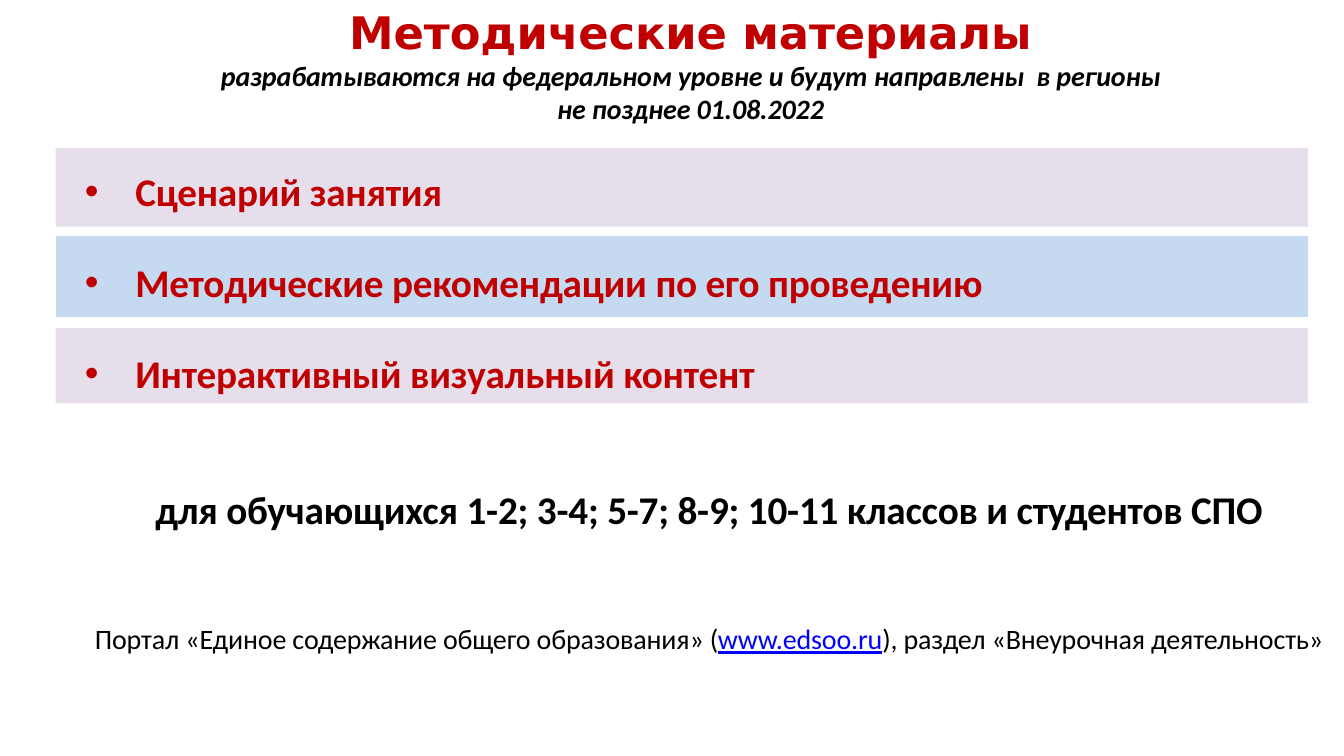
"""Build the slide on teaching materials for schools and colleges."""
from lxml.etree import SubElement
from pptx import Presentation
from pptx.dml.color import RGBColor
from pptx.enum.shapes import MSO_SHAPE
from pptx.enum.text import MSO_ANCHOR, MSO_AUTO_SIZE, PP_ALIGN
from pptx.oxml.ns import qn
from pptx.util import Cm, Pt

RED = RGBColor(0xC0, 0x00, 0x00)
BLACK = RGBColor(0x00, 0x00, 0x00)
WHITE = RGBColor(0xFF, 0xFF, 0xFF)
LINK_BLUE = RGBColor(0x00, 0x00, 0xFF)
LILAC = RGBColor(0xE6, 0xDF, 0xEB)
SKY = RGBColor(0xC5, 0xD9, 0xF0)


def place(placeholder, left, top, width, height, inset_top):
    placeholder.left, placeholder.top = Cm(left), Cm(top)
    placeholder.width, placeholder.height = Cm(width), Cm(height)
    frame = placeholder.text_frame
    frame.margin_left = frame.margin_right = frame.margin_bottom = 0
    frame.margin_top = Cm(inset_top)
    frame.vertical_anchor = MSO_ANCHOR.TOP
    frame.auto_size = MSO_AUTO_SIZE.NONE
    frame.word_wrap = True
    return frame


def indent(paragraph, left, first, bullet=None):
    properties = paragraph._p.get_or_add_pPr()
    properties.set("marL", str(Cm(left)))
    properties.set("indent", str(Cm(first)))
    if bullet:
        SubElement(properties, qn("a:buChar")).set("char", bullet)
    else:
        SubElement(properties, qn("a:buNone"))


presentation = Presentation()
presentation.slide_width, presentation.slide_height = Cm(33.87), Cm(19.05)
slide = presentation.slides.add_slide(presentation.slide_layouts[1])
title, materials = slide.placeholders

heading = place(title, 1.47, 0.08, 31.8, 3.12, 0.03).paragraphs[0]
indent(heading, 0.06, 0)
heading.alignment = PP_ALIGN.CENTER
heading.space_before = Pt(0)
heading.font.bold = True
heading_lines = [
    ("Методические материалы", "DejaVu Sans", 32, RED, False),
    ("разрабатываются на федеральном уровне и будут направлены  в регионы",
     "Calibri", 20, BLACK, True),
    ("не позднее 01.08.2022", "Calibri", 20, BLACK, True),
]
for number, (text, face, size, color, italic) in enumerate(heading_lines):
    if number:
        heading.add_line_break()
    line = heading.add_run()
    line.text = text
    line.font.name, line.font.size = face, Pt(size)
    line.font.color.rgb = color
    line.font.italic = italic

for top, height, color in [(3.73, 1.98, LILAC), (5.93, 2.08, SKY), (8.26, 1.9, LILAC)]:
    band = slide.shapes.add_shape(MSO_SHAPE.RECTANGLE, Cm(1.4), Cm(top), Cm(31.57), Cm(height))
    band.shadow.inherit = False
    band.fill.solid()
    band.fill.fore_color.rgb = color
    if color == SKY:
        band.line.color.rgb = WHITE
        band.line.width = Pt(0.75)
    else:
        band.line.fill.background()

slide.shapes._spTree.append(materials._element)
body = place(materials, 1.17, 3.38, 32.44, 13.28, 0.24)
items = [
    "Сценарий занятия",
    "Методические рекомендации по его проведению",
    "Интерактивный визуальный контент",
]
for number, text in enumerate(items):
    item = body.add_paragraph() if number else body.paragraphs[0]
    indent(item, 2.24, -1.27, "•")
    item.line_spacing = 1.5
    item.space_before = Pt(14.7 if number else 0)
    item.add_run().text = text
    item.font.name, item.font.size = "Calibri", Pt(28)
    item.font.bold = True
    item.font.color.rgb = RED

audience = [("для обучающихся 1-2; 3-4; 5-7; 8-9; 10-11 классов и студентов СПО", BLACK)]
portal = [
    ("Портал «Единое содержание общего образования» (", BLACK),
    ("www.edsoo.ru", LINK_BLUE),
    ("), раздел «Внеурочная деятельность»", BLACK),
]
for parts, size, bold in [(audience, 28, True), (portal, 20, False)]:
    note = body.add_paragraph()
    indent(note, 0.95, 0)
    note.alignment = PP_ALIGN.CENTER
    note.line_spacing = 1.0
    note.space_before = Pt(63.6)
    note.font.name, note.font.size = "Calibri", Pt(size)
    note.font.bold = bold
    for text, color in parts:
        part = note.add_run()
        part.text = text
        part.font.color.rgb = color
        part.font.underline = color == LINK_BLUE

for paragraph, tracking in [(heading, -10), *((p, -14) for p in body.paragraphs)]:
    for run in paragraph.runs:
        run._r.get_or_add_rPr().set("spc", str(tracking))

presentation.save("out.pptx")
